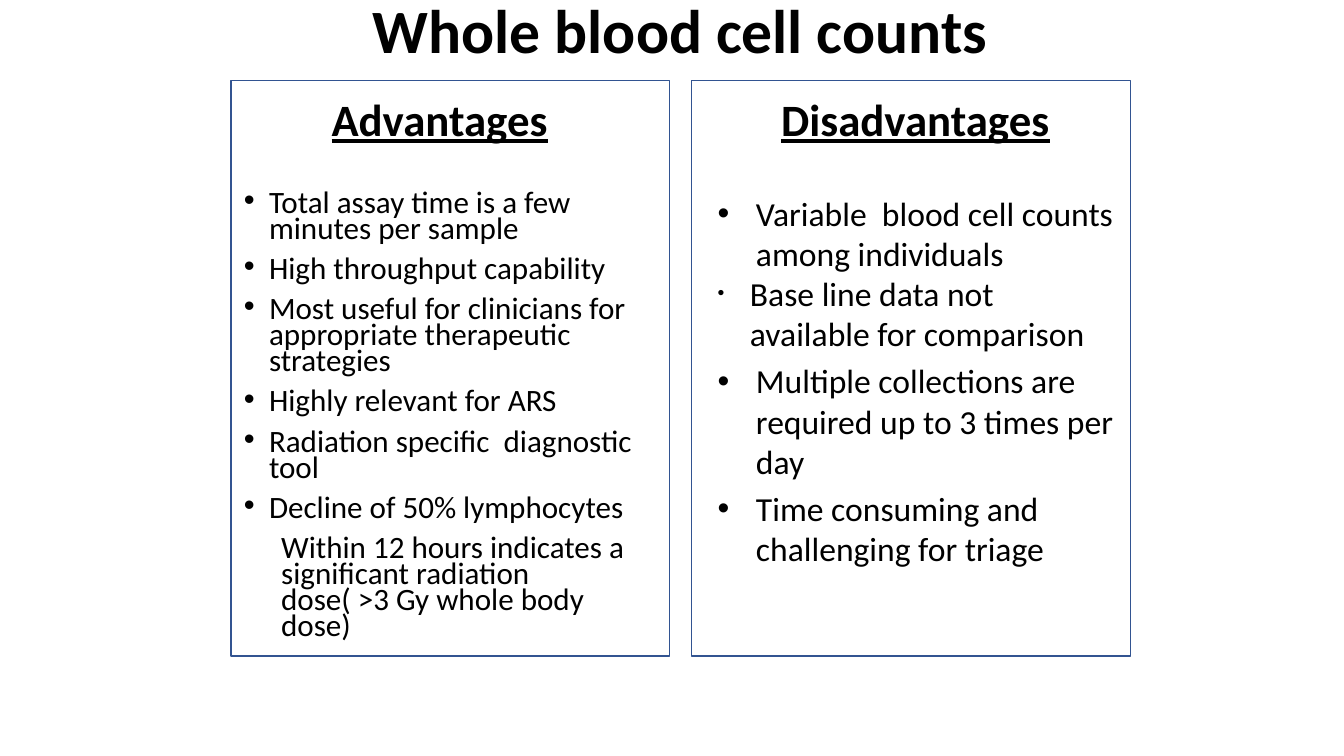
import pptx
import pptx.dml.color
import pptx.enum.shapes
import pptx.enum.text
import pptx.util
from lxml import etree

PX = 9144
FONT = "Calibri"
BLACK = "000000"
BORDER = "325491"
CENTER = pptx.enum.text.PP_ALIGN.CENTER
MIDDLE = pptx.enum.text.MSO_ANCHOR.MIDDLE

ADVANTAGES = {
    "heading": "Advantages", "heading_offset": 90, "text_offset": 3,
    "size": 22.2, "line_spacing": 0.7,
    "items": [
        ("Total assay time is a few minutes per sample", 25, 100, 10),
        ("High throughput capability", 25, 100, 10),
        ("Most useful for clinicians for appropriate therapeutic strategies", 25, 100, 10),
        ("Highly relevant for ARS", 25, 100, 10),
        ("Radiation specific  diagnostic tool", 25, 100, 10),
        ("Decline of 50% lymphocytes", 25, 100, 10),
        ("Within 12 hours indicates a significant radiation dose( >3 Gy whole body dose)",
         37, 0, 10),
    ],
}
DISADVANTAGES = {
    "heading": "Disadvantages", "heading_offset": 79, "text_offset": 16,
    "size": 24, "line_spacing": 1.0,
    "items": [
        ("Variable  blood cell counts among individuals", 38, 100, 0),
        ("Base line data not available for comparison", 32, 58, 0),
        ("Multiple collections are required up to 3 times per day", 38, 100, 4.8),
        ("Time consuming and challenging for triage", 38, 100, 4.8),
    ],
}


def px(length):
    """Turn whole pixels into EMU."""
    return pptx.util.Emu(length * PX)


def color(value):
    """Turn a hex string into a colour."""
    return pptx.dml.color.RGBColor.from_string(value)


def apply(target, values):
    """Set every attribute named in a dict."""
    for name, value in values.items():
        setattr(target, name, value)


def add_text_frame(slide, box, **values):
    """Add a wrapping text box and return its text frame."""
    frame = slide.shapes.add_textbox(*map(px, box)).text_frame
    apply(frame, {"word_wrap": True, **values})
    return frame


def write(paragraph, text, size, **values):
    """Write one run of black text into a paragraph."""
    run = paragraph.add_run()
    run.text = text
    apply(run.font, {"name": FONT, "size": pptx.util.Pt(size), **values})
    run.font.color.rgb = color(BLACK)


def set_bullet(paragraph, indent, percent):
    """Indent a paragraph and hang a bullet when its size is not zero."""
    properties = paragraph._p.get_or_add_pPr()
    properties.set("marL", str(px(indent)))
    properties.set("indent", str(px(-indent if percent else 0)))
    if percent:
        for tag, name, value in (("buSzPct", "val", str(percent * 1000)),
                                 ("buFont", "typeface", "Arial"),
                                 ("buChar", "char", "•")):
            etree.SubElement(properties, pptx.oxml.ns.qn("a:" + tag)).set(name, value)


def add_title(slide, box, text):
    """Add the centred slide title."""
    frame = add_text_frame(slide, box, vertical_anchor=MIDDLE, margin_top=0, margin_bottom=0)
    paragraph = frame.paragraphs[0]
    apply(paragraph, {"alignment": CENTER, "line_spacing": 0.9})
    write(paragraph, text, 44, bold=True)


def add_column(slide, box, column):
    """Add a bordered column with its heading and list."""
    left, top, width, height = box
    border = slide.shapes.add_shape(pptx.enum.shapes.MSO_SHAPE.RECTANGLE, *map(px, box))
    border.shadow.inherit = False
    border.fill.background()
    border.line.color.rgb = color(BORDER)
    border.line.width = pptx.util.Pt(1)

    heading = add_text_frame(slide, (left + column["heading_offset"], top + 6, 300, 64))
    write(heading.paragraphs[0], column["heading"], 32, bold=True, underline=True)

    body = add_text_frame(slide, (left + column["text_offset"], top + 106, 417, 454))
    for index, (text, indent, percent, space) in enumerate(column["items"]):
        paragraph = body.add_paragraph() if index else body.paragraphs[0]
        apply(paragraph, {"line_spacing": column["line_spacing"],
                          "space_before": pptx.util.Pt(space)})
        set_bullet(paragraph, indent, percent)
        write(paragraph, text, column["size"])


def main():
    """Build the slide and save it."""
    presentation = pptx.Presentation()
    apply(presentation, {"slide_width": px(1333), "slide_height": px(750)})
    slide = presentation.slides.add_slide(presentation.slide_layouts[6])
    add_title(slide, (250, 0, 850, 67), "Whole blood cell counts")
    for index, column in enumerate((ADVANTAGES, DISADVANTAGES)):
        add_column(slide, (229 + index * 457, 80, 435, 571), column)
    presentation.save("out.pptx")


if __name__ == "__main__":
    main()
